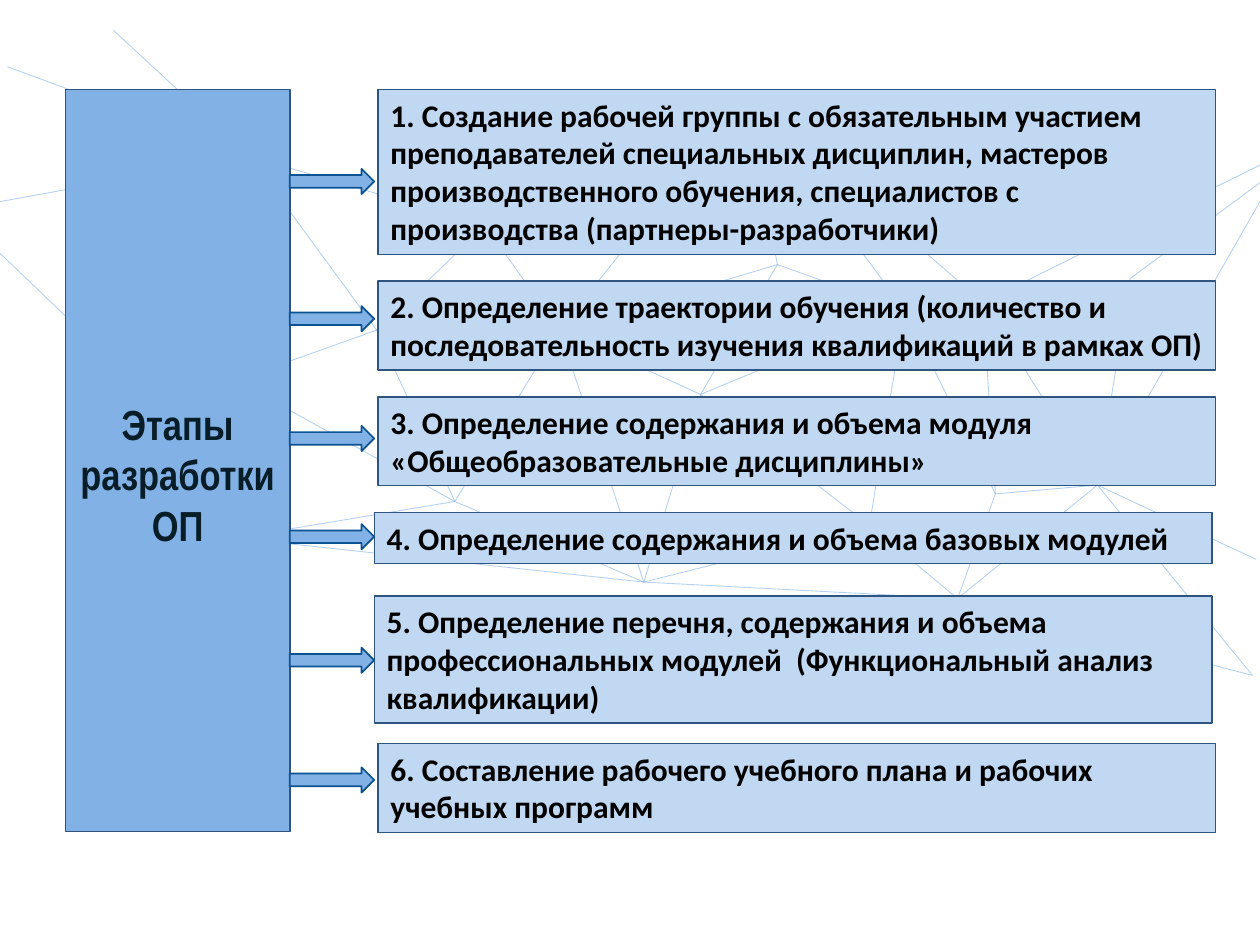
from dataclasses import dataclass

from lxml import etree
from pptx import Presentation
from pptx.dml.color import RGBColor
from pptx.enum import shapes, text
from pptx.oxml import ns
from pptx.util import Inches, Pt


@dataclass(frozen=True)
class Theme:
    accent: str = "82B1E5"
    pale: str = "C1D8F2"
    box_line: str = "305480"
    arrow_line: str = "0B5292"
    label_text: str = "071D28"
    step_text: str = "000000"
    label_font: str = "Arial Narrow"
    step_font: str = "Calibri"
    label_size: int = 24
    step_size: int = 18
    mesh_width: float = 0.5
    mesh_opacity: int = 56


THEME = Theme()

# Mesh points in inches, and the points each one is linked to
NODES = {
    "a": (0.9, 0.24), "b": (0.06, 0.53), "c": (0, 1.6), "d": (0, 2.01),
    "e": (1.98, 1.24), "f": (1.22, 3.18), "g": (1.87, 3.02), "h": (2.99, 2.62),
    "i": (3.85, 1.79), "j": (3.61, 3.98), "k": (1.87, 4.27), "l": (4.44, 2.62),
    "m": (5.11, 4.62), "n": (5.56, 3.13), "o": (5.92, 0.76), "p": (6.17, 2.1),
    "q": (7.18, 2.46), "r": (7.8, 2.4), "s": (6.9, 4.17), "t": (7.9, 3.92),
    "u": (7.6, 4.75), "v": (8.97, 2.21), "w": (8.71, 3.85), "x": (10, 1.31),
    "y": (10, 1.45), "z": (10, 1.6), "A": (9.97, 4.44), "B": (9.94, 5.36),
}
LINKS = {
    "e": "abchi", "d": "f", "h": "gij", "j": "gklm", "l": "imnop",
    "m": "knsu", "n": "pqs", "o": "pqr", "q": "pst", "r": "twx",
    "u": "stwB", "v": "wy", "w": "tzAB",
}

# Left, top, number of text lines, top of the arrow, wording
STEPS = [
    (3, 0.71, 4, 1.34, "1. Создание рабочей группы с обязательным участием "
     "преподавателей специальных дисциплин, мастеров производственного обучения, "
     "специалистов с производства (партнеры-разработчики)"),
    (3, 2.23, 2, 2.43, "2. Определение траектории обучения (количество и "
     "последовательность изучения квалификаций в рамках ОП)"),
    (3, 3.15, 2, 3.38, "3. Определение содержания и объема модуля "
     "«Общеобразовательные дисциплины»"),
    (2.97, 4.07, 1, 4.16, "4. Определение содержания и объема базовых модулей"),
    (2.97, 4.73, 3, 5.14, "5. Определение перечня, содержания и объема "
     "профессиональных модулей  (Функциональный анализ квалификации)"),
    (3, 5.9, 2, 6.09, "6. Составление рабочего учебного плана и рабочих "
     "учебных программ"),
]


def set_all(target, values):
    for name, value in values.items():
        setattr(target, name, value)


def add_mesh(slide):
    """Draw the faint background net, each link once."""
    for start, ends in LINKS.items():
        for end in ends:
            points = [Inches(value) for value in NODES[start] + NODES[end]]
            line = slide.shapes.add_connector(shapes.MSO_CONNECTOR.STRAIGHT, *points)
            line.line.width = Pt(THEME.mesh_width)
            line.line.color.rgb = RGBColor.from_string(THEME.accent)
            properties = line._element.spPr
            color = properties.find(".//" + ns.qn("a:srgbClr"))
            alpha = etree.SubElement(color, ns.qn("a:alpha"))
            alpha.set("val", str(THEME.mesh_opacity * 1000))
            etree.SubElement(properties, ns.qn("a:effectLst"))


def add_block(slide, kind, box, fill, line, width):
    shape = slide.shapes.add_shape(kind, *map(Inches, box))
    shape.shadow.inherit = False
    shape.fill.solid()
    shape.fill.fore_color.rgb = RGBColor.from_string(fill)
    shape.line.color.rgb = RGBColor.from_string(line)
    shape.line.width = Pt(width)
    return shape


def write(shape, wording, alignment, font, frame):
    set_all(shape.text_frame, {"word_wrap": True, **frame})
    paragraph = shape.text_frame.paragraphs[0]
    paragraph.alignment = alignment
    run = paragraph.add_run()
    run.text = wording
    name, size, color = font
    set_all(run.font, {"name": name, "size": Pt(size), "bold": True})
    run.font.color.rgb = RGBColor.from_string(color)


def add_label(slide, box):
    shape = add_block(slide, shapes.MSO_SHAPE.RECTANGLE, box,
                      THEME.accent, THEME.box_line, 1)
    write(shape, "Этапы разработки ОП", text.PP_ALIGN.CENTER,
          (THEME.label_font, THEME.label_size, THEME.label_text),
          {"vertical_anchor": text.MSO_ANCHOR.MIDDLE, "margin_top": Inches(0.26)})


def add_step(slide, box, wording):
    shape = add_block(slide, shapes.MSO_SHAPE.RECTANGLE, box,
                      THEME.pale, THEME.box_line, 0.75)
    write(shape, wording, text.PP_ALIGN.LEFT,
          (THEME.step_font, THEME.step_size, THEME.step_text),
          {"vertical_anchor": text.MSO_ANCHOR.TOP})


def add_steps(slide, arrow_left, step_width):
    """Place the steps, each as tall as its lines, with an arrow leading to it."""
    for left, top, lines, arrow_top, wording in STEPS:
        add_step(slide, (left, top, step_width, 0.1 + 0.303 * lines), wording)
        add_block(slide, shapes.MSO_SHAPE.RIGHT_ARROW,
                  (arrow_left, arrow_top, 0.67, 0.2),
                  THEME.accent, THEME.arrow_line, 1)


def main():
    presentation = Presentation()
    set_all(presentation, {"slide_width": Inches(10), "slide_height": Inches(7.5)})
    slide = presentation.slides.add_slide(presentation.slide_layouts[6])
    add_mesh(slide)
    add_label(slide, (0.52, 0.71, 1.78, 5.89))
    add_steps(slide, arrow_left=2.3, step_width=6.65)
    presentation.save("out.pptx")


if __name__ == "__main__":
    main()
